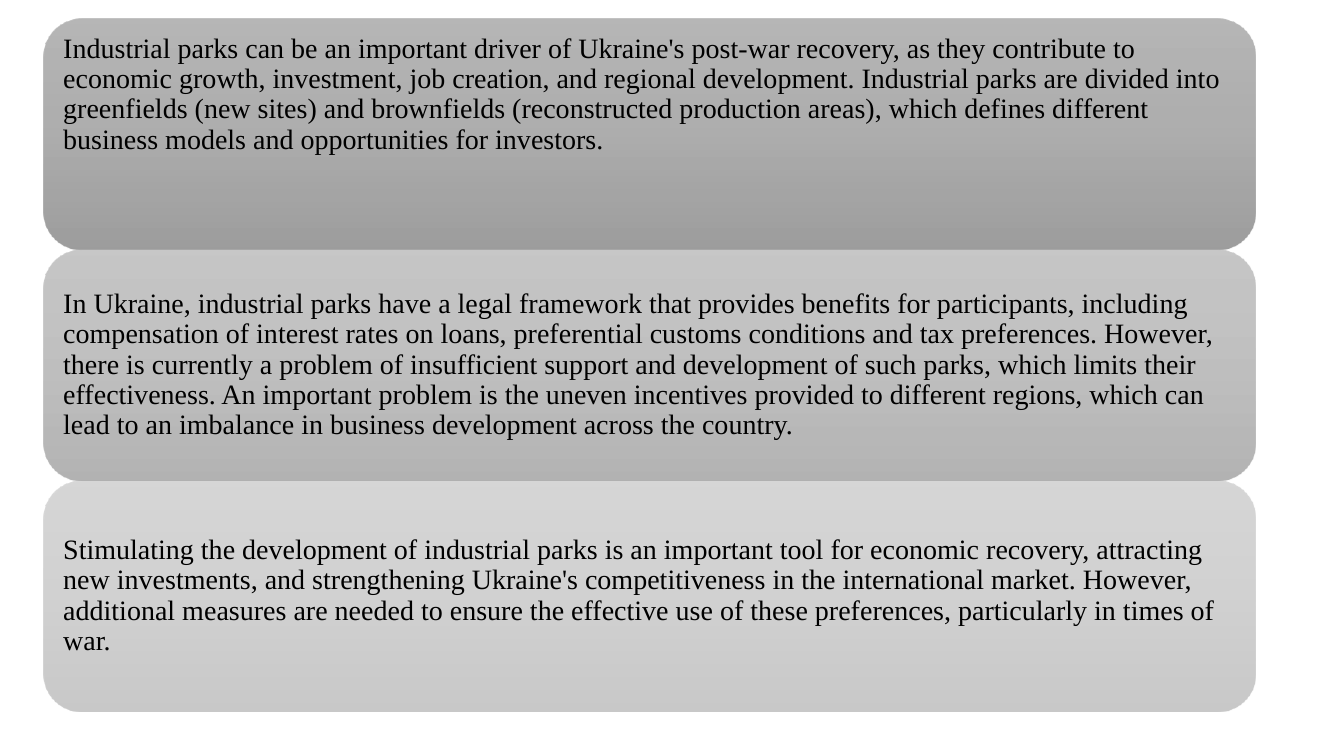
"""Build a slide with three stacked panels on industrial parks in Ukraine."""
from copy import deepcopy

from lxml.etree import SubElement
from pptx import Presentation
from pptx.dml.color import RGBColor as RGB
from pptx.enum.shapes import MSO_SHAPE as SHAPE
from pptx.enum.text import MSO_ANCHOR as ANCHOR, PP_ALIGN as ALIGN
from pptx.oxml.ns import qn
from pptx.util import Pt

PX = 12192000 / 1344
COLORS = {"top": "AFAFAF", "middle": "A5A5A5", "bottom": "939393", "text": "000000"}
LEFT, TOP, WIDTH, HEIGHT, PITCH = 44, 19, 1211, 230, 231
INSET = 8
PANELS = [
    (90, ANCHOR.TOP, 4,
     "Industrial parks can be an important driver of Ukraine's post-war recovery, "
     "as they contribute to economic growth, investment, job creation, and regional "
     "development. Industrial parks are divided into greenfields (new sites) and "
     "brownfields (reconstructed production areas), which defines different business "
     "models and opportunities for investors."),
    (70, ANCHOR.MIDDLE, INSET,
     "In Ukraine, industrial parks have a legal framework that provides benefits for "
     "participants, including compensation of interest rates on loans, preferential "
     "customs conditions and tax preferences. However, there is currently a problem of "
     "insufficient support and development of such parks, which limits their "
     "effectiveness. An important problem is the uneven incentives provided to different "
     "regions, which can lead to an imbalance in business development across the country."),
    (50, ANCHOR.MIDDLE, INSET,
     "Stimulating the development of industrial parks is an important tool for economic "
     "recovery, attracting new investments, and strengthening Ukraine's competitiveness "
     "in the international market. However, additional measures are needed to ensure the "
     "effective use of these preferences, particularly in times of war."),
]


def px(n):
    """Convert px to EMU."""
    return round(n * PX)


def shade(sp, opacity):
    """Fill a shape with the three-stop vertical gradient."""
    sp.fill.gradient()
    sp.fill.gradient_angle = 270
    stops = sp._element.spPr.find(".//" + qn("a:gsLst"))
    stops.insert(1, deepcopy(stops[0]))
    for i, name in enumerate(("top", "middle", "bottom")):
        stop = sp.fill.gradient_stops[i]
        stop.position = i / 2
        stop.color.rgb = RGB.from_string(COLORS[name])
        SubElement(stops[i][0], qn("a:alpha"), val=str(opacity * 1000))


prs = Presentation()
prs.slide_width, prs.slide_height = px(1344), px(756)
s = prs.slides.add_slide(prs.slide_layouts[6])

for i, (opacity, anchor, inset_top, text) in enumerate(PANELS):
    sp = s.shapes.add_shape(SHAPE.ROUNDED_RECTANGLE, px(LEFT), px(TOP + i * PITCH),
                            px(WIDTH), px(HEIGHT))
    sp.shadow.inherit = False
    sp.line.fill.background()
    shade(sp, opacity)
    tf = sp.text_frame
    tf.word_wrap = True
    tf.vertical_anchor = anchor
    tf.margin_left = tf.margin_right = tf.margin_bottom = px(INSET)
    tf.margin_top = px(inset_top)
    tf.text = text
    p = tf.paragraphs[0]
    p.alignment = ALIGN.LEFT
    p.line_spacing = 0.9
    font = p.runs[0].font
    font.name, font.size = "Times New Roman", Pt(20)
    font.color.rgb = RGB.from_string(COLORS["text"])

prs.save("out.pptx")
